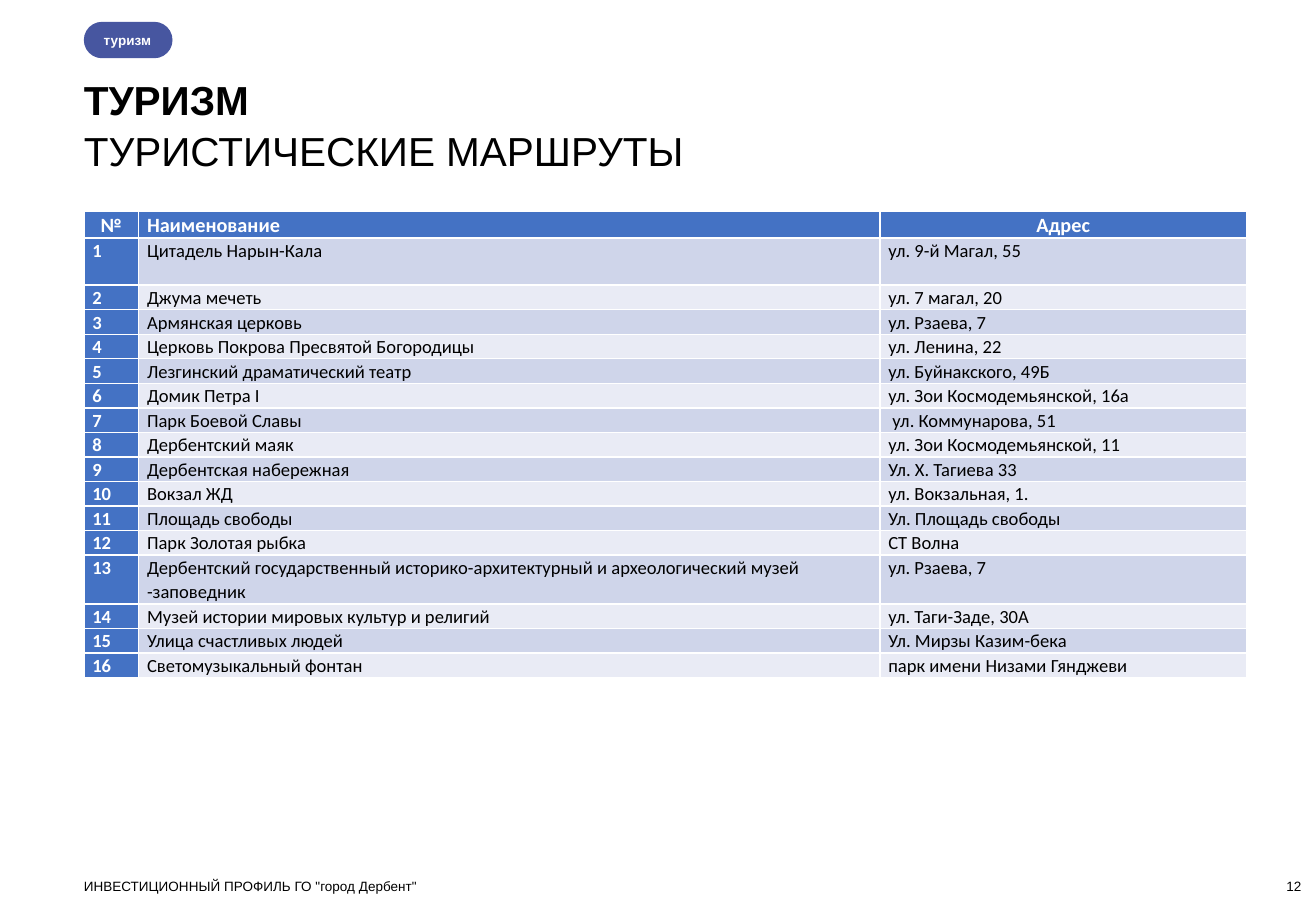
from pptx import Presentation
from pptx import util as u
from pptx.dml.color import RGBColor
from pptx.enum import shapes, text

COLORS = {
    "black": "000000",
    "white": "FFFFFF",
    "pill": "4756A0",
    "header": "4472C4",
    "band_dark": "CFD5EA",
    "band_light": "E9EBF5",
}
LEFT = 0.69
HEADINGS = ["№", "Наименование", "Адрес"]
ROUTES = [
    ("Цитадель Нарын-Кала", "ул. 9-й Магал, 55"),
    ("Джума мечеть", "ул. 7 магал, 20"),
    ("Армянская церковь", "ул. Рзаева, 7"),
    ("Церковь Покрова Пресвятой Богородицы", "ул. Ленина, 22"),
    ("Лезгинский драматический театр", "ул. Буйнакского, 49Б"),
    ("Домик Петра I", "ул. Зои Космодемьянской, 16а"),
    ("Парк Боевой Славы", " ул. Коммунарова, 51"),
    ("Дербентский маяк", "ул. Зои Космодемьянской, 11"),
    ("Дербентская набережная", "Ул. Х. Тагиева 33"),
    ("Вокзал ЖД", "ул. Вокзальная, 1."),
    ("Площадь свободы", "Ул. Площадь свободы"),
    ("Парк Золотая рыбка", "СТ Волна"),
    ("Дербентский государственный историко-архитектурный и археологический музей -заповедник",
     "ул. Рзаева, 7"),
    ("Музей истории мировых культур и религий", "ул. Таги-Заде, 30А"),
    ("Улица счастливых людей", "Ул. Мирзы Казим-бека"),
    ("Светомузыкальный фонтан", "парк имени Низами Гянджеви"),
]
TALL_ROUTES = (1, 13)


class SlideBuilder:
    font = "Arial"
    table_font = "Calibri"

    def __init__(self, prs):
        self.slide = prs.slides.add_slide(prs.slide_layouts[5])

    def color(self, name):
        return RGBColor.from_string(COLORS[name])

    def fill(self, target, name):
        target.fill.solid()
        target.fill.fore_color.rgb = self.color(name)

    def place(self, sp, box):
        sp.left, sp.top, sp.width, sp.height = [u.Inches(v) for v in box]

    def frame(self, sp, anchor=text.MSO_ANCHOR.TOP, inset=0):
        tf = sp.text_frame
        tf.word_wrap = True
        tf.auto_size = text.MSO_AUTO_SIZE.NONE
        tf.vertical_anchor = anchor
        tf.margin_left = u.Inches(inset)
        tf.margin_top = tf.margin_right = tf.margin_bottom = 0
        return tf

    def paragraph(self, p, words, size, color="black", bold=False,
                  align=text.PP_ALIGN.LEFT, font=None):
        p.text = words
        p.alignment = align
        p.font.name = font or self.font
        p.font.size = u.Pt(size)
        p.font.bold = bold
        p.font.color.rgb = self.color(color)

    def title(self, box, heading, subheading):
        sp = self.slide.shapes.title
        self.place(sp, box)
        tf = self.frame(sp)
        for p, words, bold in [(tf.paragraphs[0], heading, True),
                               (tf.add_paragraph(), subheading, False)]:
            self.paragraph(p, words, 24, bold=bold)
            p.line_spacing = 1.05

    def pill(self, box, words):
        sp = self.slide.shapes.add_shape(
            shapes.MSO_SHAPE.ROUNDED_RECTANGLE, *[u.Inches(v) for v in box])
        sp.adjustments[0] = 0.5
        sp.shadow.inherit = False
        self.fill(sp, "pill")
        sp.line.fill.background()
        tf = self.frame(sp, text.MSO_ANCHOR.MIDDLE, 0.12)
        self.paragraph(tf.paragraphs[0], words, 8, "white", True)

    def label(self, box, words, align=text.PP_ALIGN.LEFT, anchor=text.MSO_ANCHOR.TOP):
        sp = self.slide.shapes.add_textbox(*[u.Inches(v) for v in box])
        self.paragraph(self.frame(sp, anchor).paragraphs[0], words, 8, align=align)

    def cell(self, cell, words, fill, size, color, bold, align):
        self.fill(cell, fill)
        cell.margin_left = cell.margin_right = u.Inches(0.07)
        cell.margin_top = cell.margin_bottom = 0
        p = cell.text_frame.paragraphs[0]
        self.paragraph(p, words, size, color, bold, align, self.table_font)
        p.line_spacing = 1.07

    def table(self, box, widths, headings, routes):
        table = self.slide.shapes.add_table(
            len(routes) + 1, len(headings), *[u.Inches(v) for v in box]).table
        table.first_col = True
        for column, width in zip(table.columns, widths):
            column.width = u.Inches(width)
        rows = [headings] + [(str(n), *route) for n, route in enumerate(routes, 1)]
        for i, values in enumerate(rows):
            table.rows[i].height = u.Inches(0.39 if i in TALL_ROUTES else 0.19)
            for j, words in enumerate(values):
                strong = i == 0 or j == 0
                band = "band_dark" if i % 2 else "band_light"
                centred = i == 0 and j != 1
                self.cell(
                    table.cell(i, j), words,
                    fill="header" if strong else band,
                    size=12 if i == 0 else 11,
                    color="white" if strong else "black",
                    bold=strong,
                    align=text.PP_ALIGN.CENTER if centred else text.PP_ALIGN.LEFT)


def main():
    prs = Presentation()
    prs.slide_width, prs.slide_height = u.Inches(10.83), u.Inches(7.5)
    s = SlideBuilder(prs)
    s.title((LEFT, 0.6, 8, 0.81), "ТУРИЗМ", "ТУРИСТИЧЕСКИЕ МАРШРУТЫ")
    s.pill((LEFT, 0.18, 0.73, 0.3), "туризм")
    s.label((9.91, 7.23, 0.8, 0.13), "12", text.PP_ALIGN.RIGHT, text.MSO_ANCHOR.BOTTOM)
    s.label((LEFT, 7.23, 8, 0.13), 'ИНВЕСТИЦИОННЫЙ ПРОФИЛЬ ГО "город Дербент"')
    s.table((LEFT, 1.74, 9.57, 3.6), (0.45, 6.1, 3.02), HEADINGS, ROUTES)
    prs.save("out.pptx")


if __name__ == "__main__":
    main()
